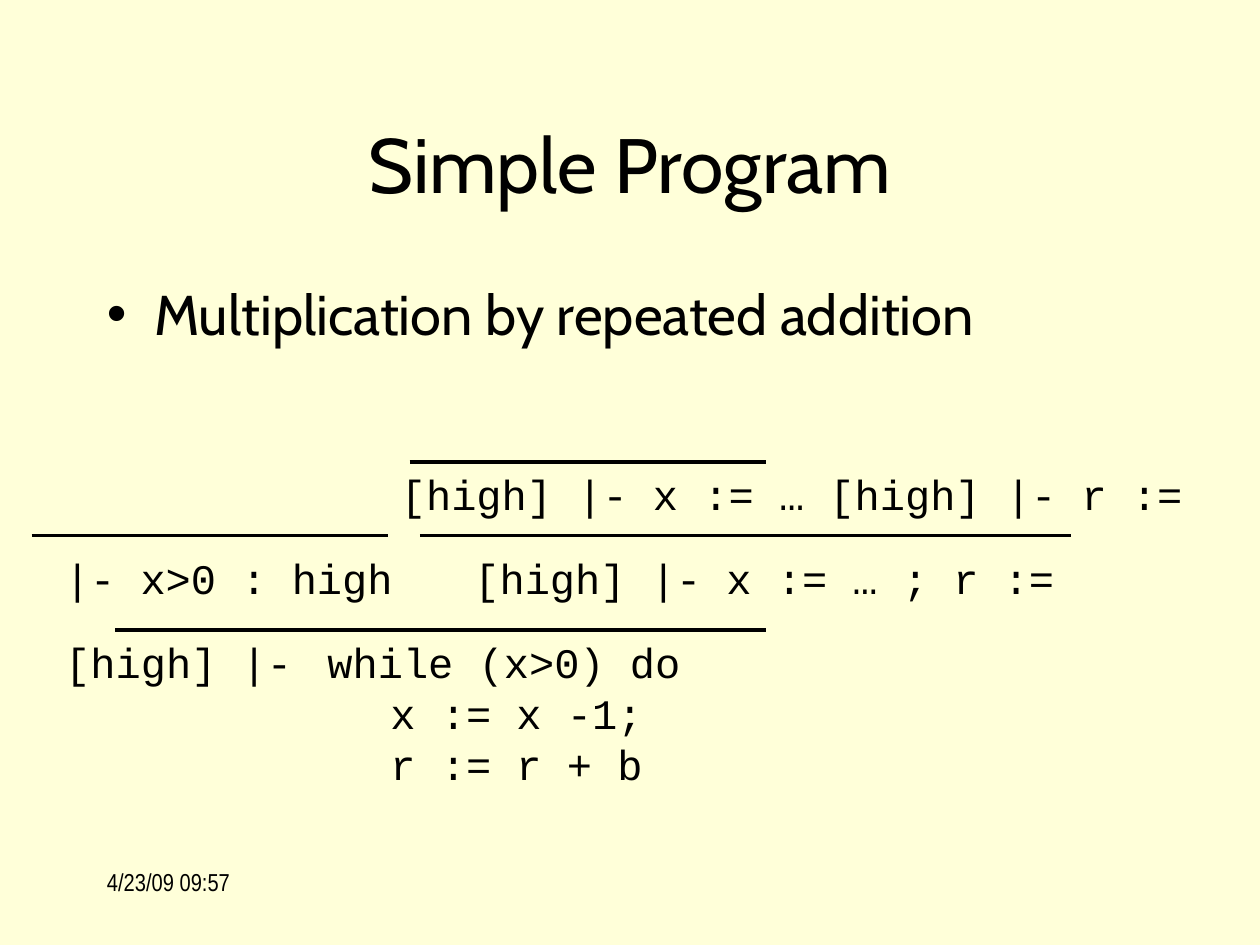
from lxml.etree import SubElement
from pptx import Presentation
from pptx.dml.color import RGBColor
from pptx.enum.shapes import MSO_CONNECTOR
from pptx.enum.text import MSO_ANCHOR, PP_ALIGN
from pptx.oxml.ns import qn
from pptx.util import Pt


def color(hex_code):
    """Turn a hex string into a colour."""
    return RGBColor.from_string(hex_code)


def add_text(slide, text, box, font="Courier New", size=24, align=PP_ALIGN.LEFT,
             anchor=MSO_ANCHOR.TOP, before=0, spacing=None, bullet=None):
    """Add a one-paragraph text box; box is left, top, width, height in points."""
    tf = slide.shapes.add_textbox(*map(Pt, box)).text_frame
    tf.word_wrap = True
    tf.vertical_anchor = anchor
    p = tf.paragraphs[0]
    p.text = text
    p.alignment = align
    p.space_before = Pt(before)
    if spacing:
        p.line_spacing = Pt(spacing)
    if bullet:
        pPr = p._p.get_or_add_pPr()
        pPr.set("marL", str(Pt(27)))
        pPr.set("indent", str(-Pt(27)))
        SubElement(pPr, qn("a:buFont")).set("typeface", "Arial")
        SubElement(pPr, qn("a:buChar")).set("char", bullet)
    for r in p.runs:
        r.font.name = font
        r.font.size = Pt(size)
        r.font.color.rgb = color("000000")


def add_rule(slide, left, right, y):
    """Add a horizontal inference line."""
    ends = map(Pt, (left, y, right, y))
    line = slide.shapes.add_connector(MSO_CONNECTOR.STRAIGHT, *ends)
    line.line.color.rgb = color("000000")
    line.line.width = Pt(2.25)
    SubElement(line._element.spPr, qn("a:effectLst"))


def main():
    """Build the slide and save it."""
    prs = Presentation()
    prs.slide_width, prs.slide_height = Pt(720), Pt(540)
    slide = prs.slides.add_slide(prs.slide_layouts[6])
    fill = slide.background.fill
    fill.solid()
    fill.fore_color.rgb = color("FFFFD9")

    add_text(slide, "4/23/09 09:57", (54, 492, 150, 36), font="Arial Narrow", size=14)
    add_text(slide, "Simple Program", (54, 48, 612, 90), font="Cabin", size=44,
             align=PP_ALIGN.CENTER, anchor=MSO_ANCHOR.MIDDLE)
    add_text(slide, "Multiplication by repeated addition", (54, 156, 612, 324),
             font="Cabin", size=32, before=2.4, bullet="•")

    add_text(slide, "while (x>0) do\n\tx := x -1;\n\tr := r + b",
             (180, 360, 264, 120), before=4, spacing=29)
    add_text(slide, "[high] |-", (0, 360, 174, 36), align=PP_ALIGN.RIGHT, before=6)
    for text, left, top, width in (
        ("|- x>0 : high", 30, 312, 264),
        ("[high] |- x := … ; r :=", 264, 312, 396),
        ("[high] |- x := … [high] |- r :=", 222, 264, 474),
    ):
        add_text(slide, text, (left, top, width, 36), before=6)

    for left, right, y in ((66, 438, 360), (18, 222, 306), (240, 612, 306), (234, 438, 264)):
        add_rule(slide, left, right, y)
    prs.save("out.pptx")


if __name__ == "__main__":
    main()
